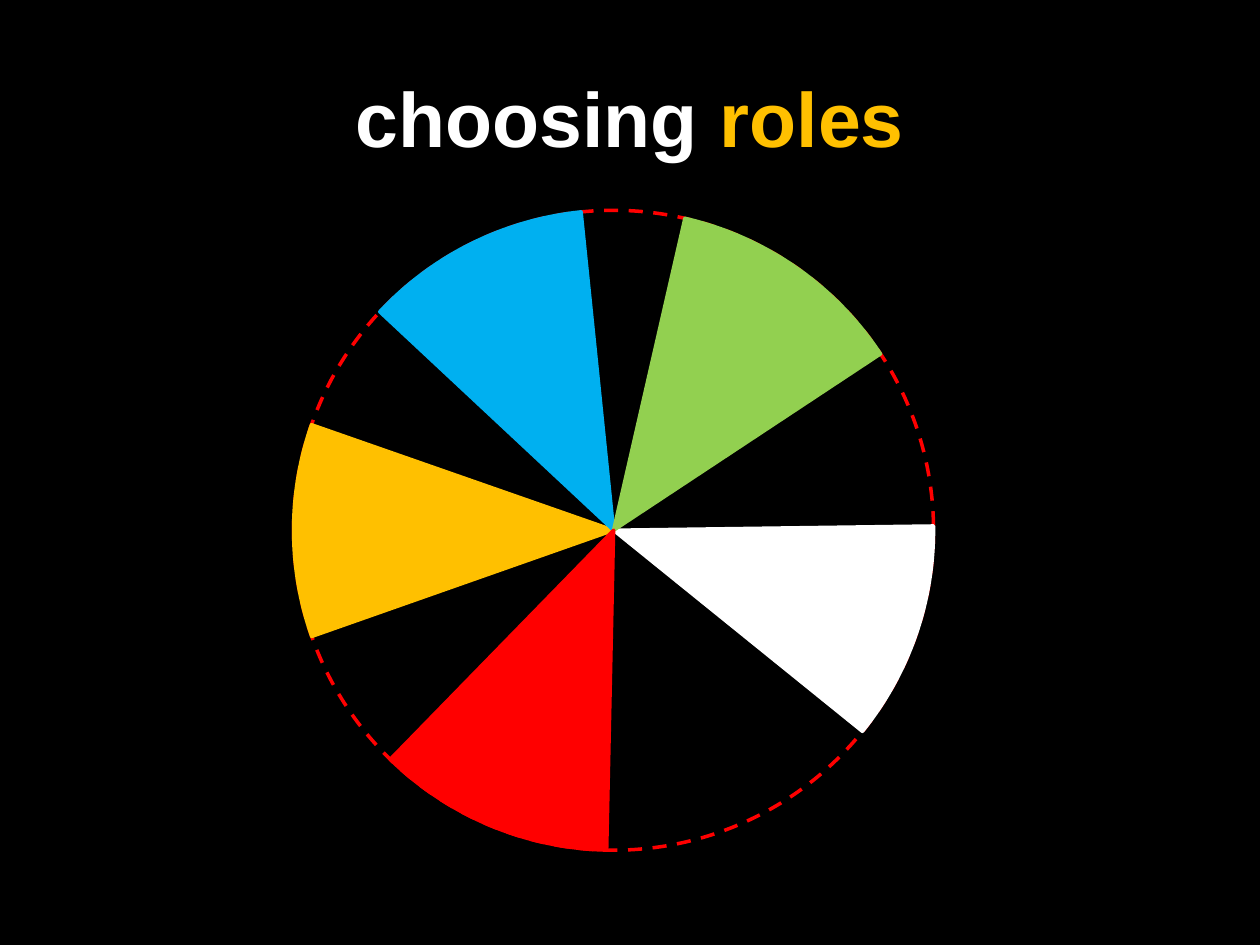
from pptx import Presentation
from pptx.dml.color import RGBColor
from pptx.enum.dml import MSO_LINE
from pptx.enum.shapes import MSO_SHAPE
from pptx.enum.text import MSO_ANCHOR, PP_ALIGN
from pptx.util import Cm, Pt

OVAL, PIE = MSO_SHAPE.OVAL, MSO_SHAPE.PIE
DASH = MSO_LINE.DASH
MIDDLE, CENTER = MSO_ANCHOR.MIDDLE, PP_ALIGN.CENTER

BLACK = RGBColor(0x00, 0x00, 0x00)
WHITE = RGBColor(0xFF, 0xFF, 0xFF)
AMBER = RGBColor(0xFF, 0xC0, 0x00)
BLUE = RGBColor(0x00, 0xB0, 0xF0)
GREEN = RGBColor(0x92, 0xD0, 0x50)
RED = RGBColor(0xFF, 0x00, 0x00)

ADJUSTMENT_PER_DEGREE = 0.6


def add_round(page, kind, fill, line):
    shape = page.shapes.add_shape(kind, Cm(5.92), Cm(4.24), Cm(12.9), Cm(12.9))
    shape.shadow.inherit = False
    shape.fill.solid()
    shape.fill.fore_color.rgb = fill
    shape.line.color.rgb = line
    shape.line.width = Pt(2)
    return shape


deck = Presentation()
deck.slide_width, deck.slide_height = Cm(25.4), Cm(19.05)
page = deck.slides.add_slide(deck.slide_layouts[5])
page.background.fill.solid()
page.background.fill.fore_color.rgb = BLACK

title = page.shapes.title
title.left, title.top = Cm(1.27), Cm(0.76)
title.width, title.height = Cm(22.86), Cm(3.18)
title.text_frame.vertical_anchor = MIDDLE
para = title.text_frame.paragraphs[0]
para.alignment = CENTER
for text, color in [("choosing ", WHITE), ("roles", AMBER)]:
    span = para.add_run()
    span.text = text
    span.font.name = "Arial"
    span.font.size = Pt(44)
    span.font.bold = True
    span.font.color.rgb = color

wheel = add_round(page, OVAL, BLACK, RED)
wheel.line.dash_style = DASH

slices = [
    (WHITE, 359.24, 38.95),
    (AMBER, 160.61, 199.25),
    (BLUE, 223.05, 264.18),
    (GREEN, 282.89, 326.56),
    (RED, 91.23, 134.27),
]
for color, start, end in slices:
    role = add_round(page, PIE, color, color)
    role.adjustments[0] = start * ADJUSTMENT_PER_DEGREE
    role.adjustments[1] = end * ADJUSTMENT_PER_DEGREE

deck.save("out.pptx")
